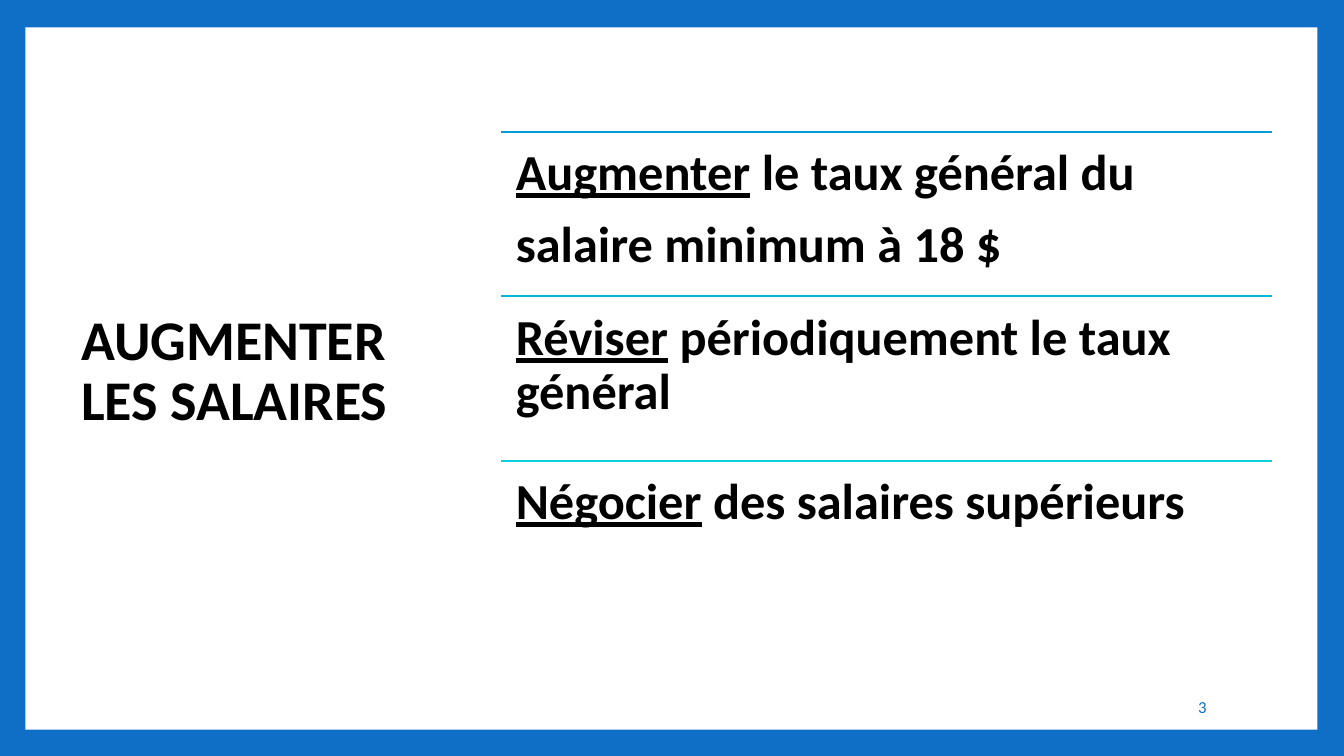
from dataclasses import dataclass

from lxml.etree import SubElement
from pptx import Presentation
from pptx.dml.color import RGBColor
from pptx.enum.shapes import MSO_CONNECTOR, MSO_SHAPE
from pptx.enum.text import MSO_ANCHOR, PP_ALIGN
from pptx.oxml.ns import qn
from pptx.slide import Slide
from pptx.text.text import TextFrame
from pptx.util import Cm, Pt

COLOURS = {
    "frame": "0F6FC6",
    "panel": "FFFFFF",
    "text": "000000",
    "raise": "009DD9",
    "review": "05B7D9",
    "negotiate": "0BD0D9",
}
DEMAND_LEFT, DEMAND_TOP = 12.62, 3.33
DEMAND_WIDTH, DEMAND_HEIGHT = 19.43, 4.14


@dataclass(frozen=True)
class Demand:
    verb: str
    rest: str
    colour: str
    second_line: str = ""


DEMANDS = [
    Demand("Augmenter", " le taux général du", "raise", "salaire minimum à 18 $"),
    Demand("Réviser", " périodiquement le taux général", "review"),
    Demand("Négocier", " des salaires supérieurs", "negotiate"),
]


def colour(key: str) -> RGBColor:
    return RGBColor.from_string(COLOURS[key])


def set_all(target: object, values: dict[str, object]) -> None:
    for attribute, value in values.items():
        setattr(target, attribute, value)


def add_text_frame(slide: Slide, left: float, top: float, width: float,
                   height: float, **settings: object) -> TextFrame:
    """Add a wrapping text box, measured in centimetres."""
    box = slide.shapes.add_textbox(Cm(left), Cm(top), Cm(width), Cm(height))
    set_all(box.text_frame, {"word_wrap": True, **settings})
    return box.text_frame


def add_run(paragraph, text: str, size: float, colour_key: str = "text",
            **settings: object) -> None:
    run = paragraph.add_run()
    run.text = text
    set_all(run.font, {"name": "Calibri", "size": Pt(size), **settings})
    run.font.color.rgb = colour(colour_key)


def add_demand(slide: Slide, demand: Demand, top: float) -> None:
    """Draw the rule above a demand and its text below."""
    rule = slide.shapes.add_connector(
        MSO_CONNECTOR.STRAIGHT, Cm(DEMAND_LEFT), Cm(top),
        Cm(DEMAND_LEFT + DEMAND_WIDTH), Cm(top))
    rule.line.color.rgb = colour(demand.colour)
    rule.line.width = Pt(1.5)
    SubElement(rule._element.spPr, qn("a:effectLst"))

    margins = {f"margin_{side}": Cm(0.38) for side in ("left", "top", "right", "bottom")}
    frame = add_text_frame(slide, DEMAND_LEFT, top, DEMAND_WIDTH, DEMAND_HEIGHT, **margins)
    spacing = {"line_spacing": 0.9, "space_after": Pt(12.6)}
    first = frame.paragraphs[0]
    set_all(first, spacing)
    add_run(first, demand.verb, 36, bold=True, underline=True)
    add_run(first, demand.rest, 36, bold=True)
    if demand.second_line:
        second = frame.add_paragraph()
        set_all(second, spacing)
        add_run(second, demand.second_line, 36, bold=True)


def main() -> None:
    presentation = Presentation()
    set_all(presentation, {"slide_width": Cm(33.87), "slide_height": Cm(19.05)})
    slide = presentation.slides.add_slide(presentation.slide_layouts[6])
    slide.background.fill.solid()
    slide.background.fill.fore_color.rgb = colour("frame")

    panel = slide.shapes.add_shape(
        MSO_SHAPE.RECTANGLE, Cm(0.64), Cm(0.69), Cm(32.56), Cm(17.7))
    panel.shadow.inherit = False
    panel.fill.solid()
    panel.fill.fore_color.rgb = colour("panel")
    panel.line.fill.background()

    title = add_text_frame(slide, 1.8, 1.6, 9.35, 15.57,
                           vertical_anchor=MSO_ANCHOR.MIDDLE).paragraphs[0]
    title.line_spacing = 0.9
    add_run(title, "AUGMENTER LES SALAIRES", 40, bold=True)

    for index, demand in enumerate(DEMANDS):
        add_demand(slide, demand, DEMAND_TOP + index * DEMAND_HEIGHT)

    page_number = add_text_frame(slide, 25.91, 17.3, 4.75, 1.02,
                                 vertical_anchor=MSO_ANCHOR.MIDDLE).paragraphs[0]
    page_number.alignment = PP_ALIGN.RIGHT
    add_run(page_number, "3", 12, "frame")

    presentation.save("out.pptx")


if __name__ == "__main__":
    main()
